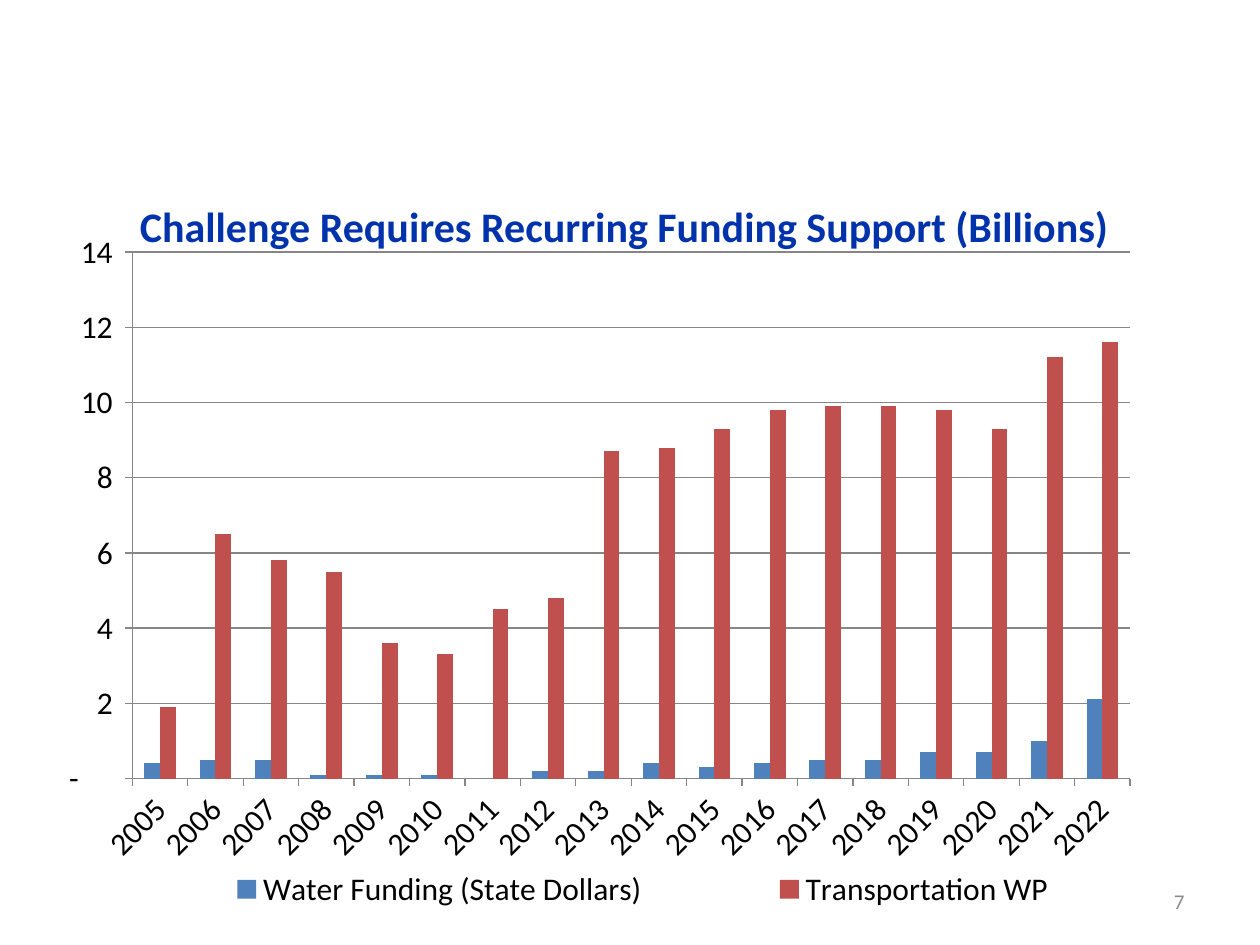
"""Build the recurring funding slide with its clustered column chart."""
from dataclasses import dataclass

from lxml.etree import Element, SubElement
from pptx import Presentation
from pptx.chart.data import CategoryChartData
from pptx.dml.color import RGBColor
from pptx.enum.chart import XL_CHART_TYPE as ChartType
from pptx.enum.chart import XL_LEGEND_POSITION as LegendPosition
from pptx.enum.chart import XL_TICK_MARK as TickMark
from pptx.enum.text import MSO_ANCHOR as Anchor
from pptx.enum.text import PP_ALIGN as Align
from pptx.oxml.ns import qn
from pptx.util import Inches, Pt

BLUE = RGBColor(0x4F, 0x81, 0xBD)
RED = RGBColor(0xC0, 0x50, 0x4D)
TITLE_BLUE = RGBColor(0x00, 0x33, 0xAB)
BLACK = RGBColor(0x00, 0x00, 0x00)
GRAY = RGBColor(0x8C, 0x8C, 0x8C)
AXIS_GRAY = RGBColor(0x86, 0x86, 0x86)
FONT = "Calibri"
WIDTH, HEIGHT = Inches(10), Inches(7.5)
ACCOUNTING = '_(* #,##0_);_(* (#,##0);_(* "-"??_);_(@_)'


@dataclass(frozen=True)
class Box:
    """A frame in inches, or in shares of the chart."""
    left: float
    top: float
    width: float
    height: float

    def lengths(self) -> list:
        """Return the frame as slide lengths."""
        return [Inches(n) for n in (self.left, self.top, self.width, self.height)]


@dataclass(frozen=True)
class FundingSeries:
    """One set of yearly columns, in billions."""
    name: str
    color: RGBColor
    values: tuple


YEARS = [str(year) for year in range(2005, 2023)]
FUNDING = (
    FundingSeries("Water Funding (State Dollars)", BLUE,
                  (0.4, 0.5, 0.5, 0.1, 0.1, 0.1, 0, 0.2, 0.2,
                   0.4, 0.3, 0.4, 0.5, 0.5, 0.7, 0.7, 1, 2.1)),
    FundingSeries("Transportation WP", RED,
                  (1.9, 6.5, 5.8, 5.5, 3.6, 3.3, 4.5, 4.8, 8.7,
                   8.8, 9.3, 9.8, 9.9, 9.9, 9.8, 9.3, 11.2, 11.6)),
)


def style_font(font, size: int, color: RGBColor, bold: bool = False) -> None:
    """Apply the slide's typeface with a size, colour and weight."""
    font.name, font.size, font.bold = FONT, Pt(size), bold
    font.color.rgb = color


def write_text(shape, text: str, align: Align, size: int,
               color: RGBColor, bold: bool = False) -> None:
    """Put one vertically centred line of text into a shape."""
    frame = shape.text_frame
    frame.text, frame.word_wrap = text, True
    frame.vertical_anchor = Anchor.MIDDLE
    paragraph = frame.paragraphs[0]
    paragraph.alignment = align
    style_font(paragraph.runs[0].font, size, color, bold)


def set_layout(parent, index: int, box: Box, inner: bool = False) -> None:
    """Place a chart part at fixed shares of the chart."""
    for old in parent.findall(qn("c:layout")):
        parent.remove(old)
    layout = Element(qn("c:layout"))
    manual = SubElement(layout, qn("c:manualLayout"))
    settings = [("layoutTarget", "inner")] if inner else []
    settings += [("xMode", "edge"), ("yMode", "edge"), ("x", box.left),
                 ("y", box.top), ("w", box.width), ("h", box.height)]
    for tag, value in settings:
        SubElement(manual, qn(f"c:{tag}")).set("val", str(value))
    parent.insert(index, layout)


def style_line(line) -> None:
    """Draw a thin gray axis or grid line."""
    line.color.rgb = AXIS_GRAY
    line.width = Pt(0.75)


def add_funding_chart(slide, box: Box) -> None:
    """Add the yearly funding columns with axes and legend."""
    data = CategoryChartData(number_format=ACCOUNTING)
    data.categories = YEARS
    for entry in FUNDING:
        data.add_series(entry.name, entry.values)
    chart = slide.shapes.add_chart(
        ChartType.COLUMN_CLUSTERED, *box.lengths(), data).chart
    style_font(chart.font, 18, BLACK)
    chart.has_title = False

    plot = chart.plots[0]
    plot.gap_width, plot.overlap, plot.vary_by_categories = 150, 0, False
    for series, entry in zip(plot.series, FUNDING):
        series.format.fill.solid()
        series.format.fill.fore_color.rgb = entry.color

    for axis in (chart.category_axis, chart.value_axis):
        axis.major_tick_mark = TickMark.OUTSIDE
        axis.minor_tick_mark = TickMark.NONE
        style_line(axis.format.line)
        style_font(axis.tick_labels.font, 18, BLACK)
    years = chart.category_axis._element
    years.find(qn("c:txPr")).find(qn("a:bodyPr")).set("rot", "-2700000")
    amounts = chart.value_axis
    amounts.minimum_scale, amounts.maximum_scale, amounts.major_unit = 0, 14, 2
    amounts.has_major_gridlines = True
    style_line(amounts.major_gridlines.format.line)
    amounts.tick_labels.number_format = ACCOUNTING
    amounts.tick_labels.number_format_is_linked = False

    chart.has_legend = True
    legend = chart.legend
    legend.position = LegendPosition.RIGHT
    legend.include_in_layout = False
    style_font(legend.font, 18, BLACK)
    set_layout(legend._element, 1, Box(0.05, 0.93, 0.94, 0.07))
    plot_area = chart._chartSpace.find(qn("c:chart")).find(qn("c:plotArea"))
    set_layout(plot_area, 0, Box(0.07, 0.04, 0.88, 0.76), inner=True)


def main() -> None:
    """Build and save the slide."""
    presentation = Presentation()
    presentation.slide_width, presentation.slide_height = WIDTH, HEIGHT
    slide = presentation.slides.add_slide(presentation.slide_layouts[5])
    add_funding_chart(slide, Box(0.42, 1.78, 9, 5.5))

    title = slide.shapes.title
    title.left, title.top, title.width, title.height = Box(
        0.58, 1.33, 8.75, 0.92).lengths()
    write_text(title, "Challenge Requires Recurring Funding Support (Billions)",
               Align.CENTER, 24, TITLE_BLUE, bold=True)
    slide.shapes.element.append(title.element)

    number = slide.shapes.add_textbox(*Box(7.17, 6.95, 2.33, 0.4).lengths())
    write_text(number, "7", Align.RIGHT, 12, GRAY)
    presentation.save("out.pptx")


if __name__ == "__main__":
    main()
